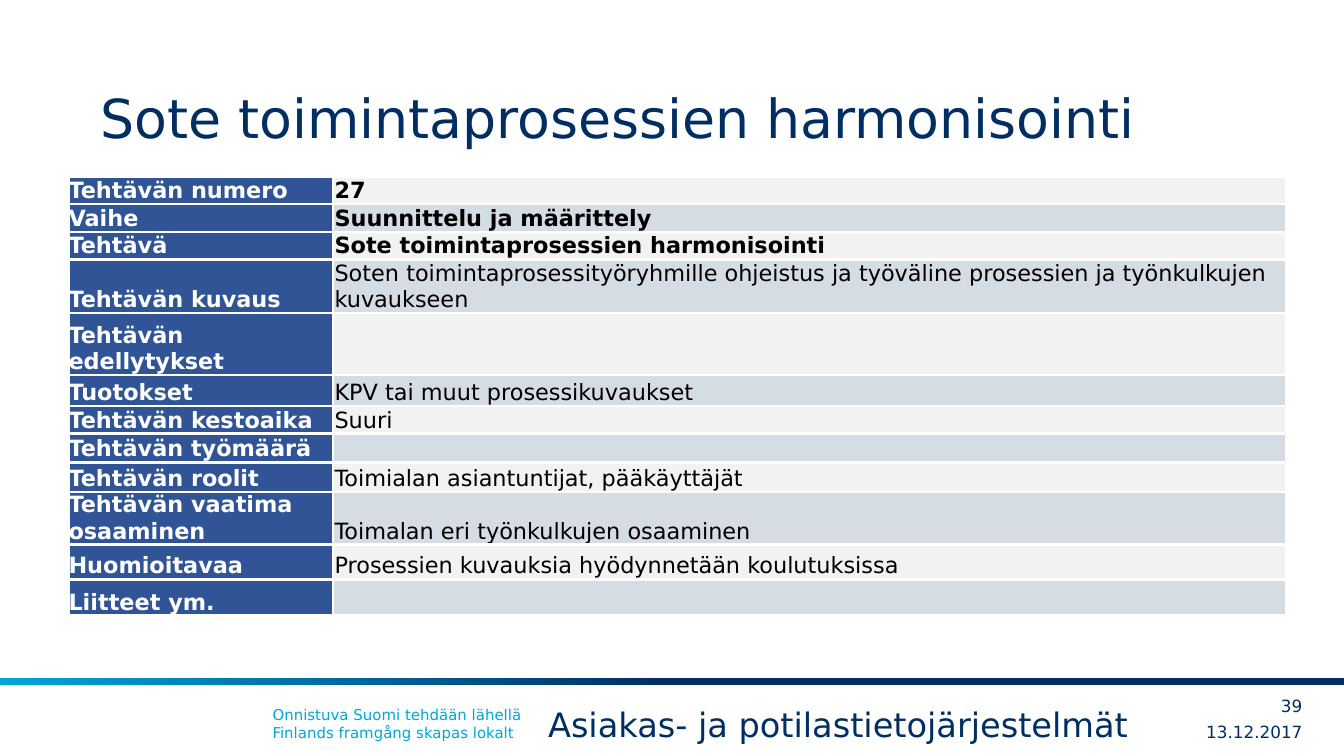
"""Build the slide describing the harmonisation of social and health care processes."""
from dataclasses import dataclass

import pptx
import pptx.dml.color
import pptx.enum.shapes
import pptx.enum.text
import pptx.oxml
import pptx.oxml.ns
import pptx.util
from pptx.enum.text import MSO_ANCHOR, PP_ALIGN

FONT = "DejaVu Sans"
COLORS = {
    "navy": "002E63", "cyan": "00A6D6", "label": "305496", "light": "F2F2F2",
    "band": "D6DCE4", "white": "FFFFFF", "black": "000000",
}
WIDTH = pptx.util.Inches(10)
HEIGHT = WIDTH * 9 // 16
COLUMN, ROW = WIDTH / 100, HEIGHT / 100
LABEL_COLUMNS, DETAIL_COLUMNS = 19.7, 70.9
LINE = 3.65


@dataclass(frozen=True)
class Area:
    left: float
    top: float
    width: float
    height: float

    def lengths(self) -> tuple[int, int, int, int]:
        return (round(self.left * COLUMN), round(self.top * ROW),
                round(self.width * COLUMN), round(self.height * ROW))


@dataclass(frozen=True)
class Caption:
    text: str
    area: Area
    size: float
    color: str = "navy"
    wrap: bool = True
    align: PP_ALIGN = PP_ALIGN.LEFT
    anchor: MSO_ANCHOR = MSO_ANCHOR.TOP
    insets: tuple[float, float] = (0.1, 0.05)


@dataclass(frozen=True)
class Task:
    label: str
    detail: str = ""
    rows: float = LINE
    bold: bool = False


TITLE = Caption("Sote toimintaprosessien harmonisointi", Area(7.45, 4.0, 85.1, 16.7),
                28.8, anchor=MSO_ANCHOR.BOTTOM, insets=(0, 0.05))
FOOTERS = [
    Caption("Onnistuva Suomi tehdään lähellä\vFinlands framgång skapas lokalt",
            Area(19.3, 92.5, 65.4, 6.58), 8, "cyan"),
    Caption("13.12.2017", Area(87, 94.8, 9.9, 3.91), 9, align=PP_ALIGN.RIGHT,
            anchor=MSO_ANCHOR.MIDDLE, insets=(0, 0)),
    Caption("39", Area(92.6, 91.4, 4.3, 3.91), 9, align=PP_ALIGN.RIGHT,
            anchor=MSO_ANCHOR.MIDDLE, insets=(0, 0)),
    Caption("Asiakas- ja potilastietojärjestelmät", Area(39.8, 92.3, 46.3, 7.12), 18, wrap=False),
]
TASKS = [
    Task("Tehtävän numero", "27", bold=True),
    Task("Vaihe", "Suunnittelu ja määrittely", bold=True),
    Task("Tehtävä", "Sote toimintaprosessien harmonisointi", bold=True),
    Task("Tehtävän kuvaus", "Soten toimintaprosessityöryhmille ohjeistus ja työväline "
         "prosessien ja työnkulkujen kuvaukseen", 7.12),
    Task("Tehtävän edellytykset", rows=8.19),
    Task("Tuotokset", "KPV tai muut prosessikuvaukset", 4.09),
    Task("Tehtävän kestoaika", "Suuri"),
    Task("Tehtävän työmäärä"),
    Task("Tehtävän roolit", "Toimialan asiantuntijat, pääkäyttäjät", 3.91),
    Task("Tehtävän vaatima osaaminen", "Toimalan eri työnkulkujen osaaminen", 6.94),
    Task("Huomioitavaa", "Prosessien kuvauksia hyödynnetään koulutuksissa", 4.63),
    Task("Liitteet ym.", rows=4.8),
]


def rgb(name: str) -> pptx.dml.color.RGBColor:
    return pptx.dml.color.RGBColor.from_string(COLORS[name])


def format_runs(paragraph, size: float, color: str, bold: bool = False) -> None:
    for run in paragraph.runs:
        run.font.name, run.font.size, run.font.bold = FONT, pptx.util.Pt(size), bold
        run.font.color.rgb = rgb(color)


def write_caption(shape, caption: Caption) -> None:
    shape.left, shape.top, shape.width, shape.height = caption.area.lengths()
    frame = shape.text_frame
    frame.text = caption.text
    frame.word_wrap = caption.wrap
    frame.auto_size = pptx.enum.text.MSO_AUTO_SIZE.NONE
    frame.vertical_anchor = caption.anchor
    side, edge = map(pptx.util.Inches, caption.insets)
    frame.margin_left = frame.margin_right = side
    frame.margin_top = frame.margin_bottom = edge
    frame.paragraphs[0].alignment = caption.align
    format_runs(frame.paragraphs[0], caption.size, caption.color)


def draw_rule(slide) -> None:
    rule = slide.shapes.add_shape(pptx.enum.shapes.MSO_SHAPE.RECTANGLE,
                                  *Area(0, 89.75, 100, 0.89).lengths())
    rule.shadow.inherit = False
    rule.line.fill.background()
    rule.fill.gradient()
    rule.fill.gradient_angle = 180
    for stop, position, color in zip(rule.fill.gradient_stops, (0.5, 1), ("navy", "cyan")):
        stop.position = position
        stop.color.rgb = rgb(color)


def write_cell(cell, text: str, fill: str, color: str, bold: bool, inset: float) -> None:
    cell.text = text
    cell.vertical_anchor = MSO_ANCHOR.BOTTOM
    cell.margin_left = cell.margin_right = cell.margin_top = pptx.util.Inches(inset)
    cell.margin_bottom = 0
    properties = cell._tc.get_or_add_tcPr()
    for side in ("lnL", "lnR", "lnT", "lnB"):
        properties.append(pptx.oxml.parse_xml(
            f'<a:{side} {pptx.oxml.ns.nsdecls("a")} w="{pptx.util.Pt(1.5)}"><a:solidFill>'
            f'<a:srgbClr val="{COLORS["white"]}"/></a:solidFill></a:{side}>'))
    cell.fill.solid()
    cell.fill.fore_color.rgb = rgb(fill)
    paragraph = cell.text_frame.paragraphs[0]
    format_runs(paragraph, 12, color, bold)
    if not text:
        paragraph._p.append(pptx.oxml.parse_xml(
            f'<a:endParaRPr {pptx.oxml.ns.nsdecls("a")} sz="1200"/>'))


def draw_tasks(slide) -> None:
    area = Area(5.1, 23.35, LABEL_COLUMNS + DETAIL_COLUMNS, sum(task.rows for task in TASKS))
    table = slide.shapes.add_table(len(TASKS), 2, *area.lengths()).table
    table.first_row = table.horz_banding = False
    for column, width in zip(table.columns, (LABEL_COLUMNS, DETAIL_COLUMNS)):
        column.width = round(width * COLUMN)
    for index, task in enumerate(TASKS):
        table.rows[index].height = round(task.rows * ROW)
        write_cell(table.cell(index, 0), task.label, "label", "white", True, 0)
        write_cell(table.cell(index, 1), task.detail, "band" if index % 2 else "light",
                   "black", task.bold, 0.01)


def main() -> None:
    deck = pptx.Presentation()
    deck.slide_width, deck.slide_height = WIDTH, HEIGHT
    slide = deck.slides.add_slide(deck.slide_layouts[5])
    draw_rule(slide)
    write_caption(slide.shapes.title, TITLE)
    draw_tasks(slide)
    for footer in FOOTERS:
        write_caption(slide.shapes.add_textbox(*footer.area.lengths()), footer)
    deck.save("out.pptx")


if __name__ == "__main__":
    main()
